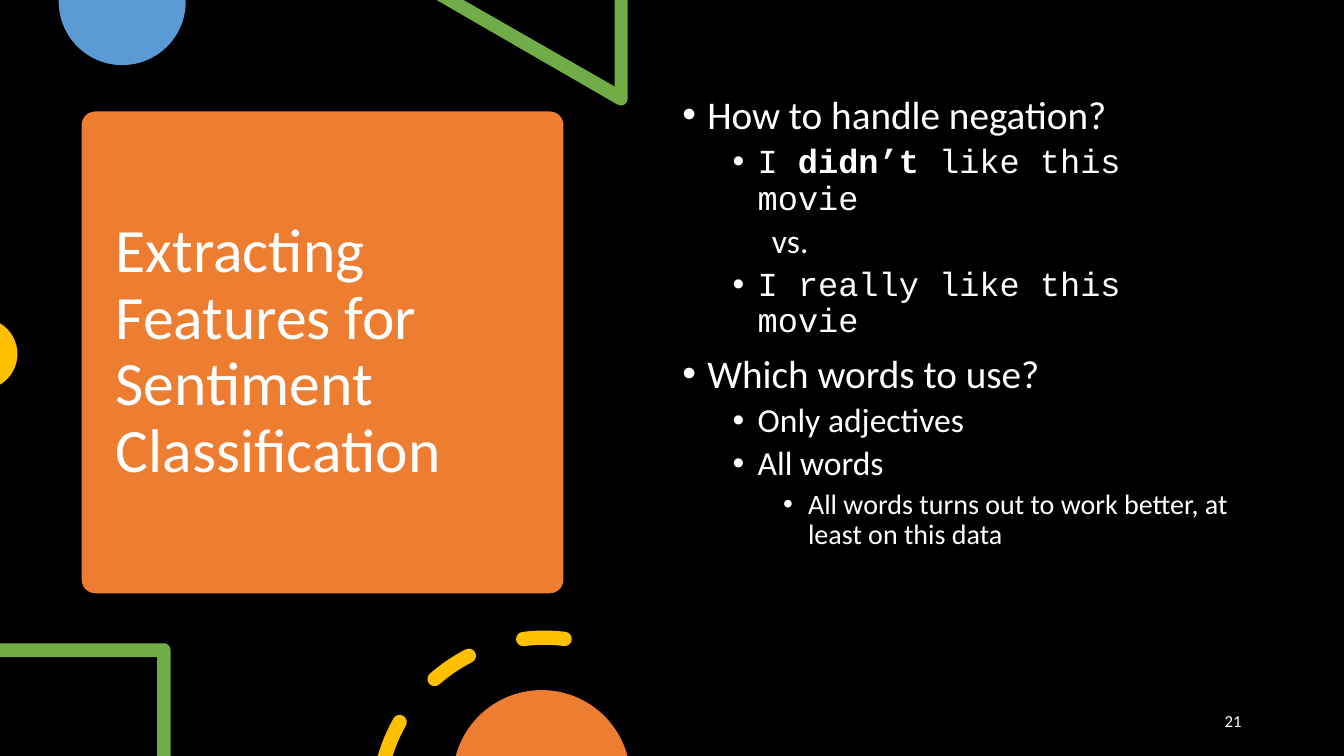
from math import ceil, cos, radians, sin, tan

from lxml import etree
from pptx import Presentation
from pptx.dml.color import RGBColor
from pptx.enum.shapes import MSO_SHAPE
from pptx.enum.text import MSO_ANCHOR, MSO_AUTO_SIZE, PP_ALIGN
from pptx.oxml.ns import qn
from pptx.util import Cm, Pt

ROUNDED = MSO_SHAPE.ROUNDED_RECTANGLE
MIDDLE, TOP = MSO_ANCHOR.MIDDLE, MSO_ANCHOR.TOP
LEFT, RIGHT = PP_ALIGN.LEFT, PP_ALIGN.RIGHT
NO_FIT = MSO_AUTO_SIZE.NONE

BLACK = RGBColor(0x00, 0x00, 0x00)
WHITE = RGBColor(0xFF, 0xFF, 0xFF)
ORANGE = RGBColor(0xED, 0x7D, 0x31)
BLUE = RGBColor(0x5B, 0x9B, 0xD5)
GREEN = RGBColor(0x70, 0xAD, 0x47)
YELLOW = RGBColor(0xFF, 0xC0, 0x00)

SANS, MONO = "Calibri", "Courier New"
WIDTH, HEIGHT = 33.87, 19.05

# Paragraph formats: level, left margin and hanging indent in cm, space before, size
HEAD = dict(level=0, margin=0.63, hang=0.63, before=10, size=28)
ITEM = dict(level=1, margin=1.9, hang=0.63, before=5, size=24)
PLAIN = dict(ITEM, margin=2.26, hang=0)
DETAIL = dict(level=2, margin=3.17, hang=0.63, before=5, size=20)

# Each paragraph: format, font, runs as (text, bold)
BODY = [
    (HEAD, SANS, [("How to handle negation?", False)]),
    (ITEM, MONO, [("I ", False), ("didn’t", True), (" like this movie", False)]),
    (PLAIN, SANS, [("vs.", False)]),
    (ITEM, MONO, [("I really like this movie", False)]),
    (HEAD, SANS, [("Which words to use?", False)]),
    (ITEM, SANS, [("Only adjectives", False)]),
    (ITEM, SANS, [("All words", False)]),
    (DETAIL, SANS, [("All words turns out to work better, at least on this data", False)]),
]


def place(sp, box):
    for name, value in zip(("left", "top", "width", "height"), box):
        setattr(sp, name, Cm(value))


def set_frame(tf, anchor):
    for name, value in dict(word_wrap=True, auto_size=NO_FIT, vertical_anchor=anchor).items():
        setattr(tf, name, value)


def add_run(p, text, size, font=SANS, bold=False):
    r = p.add_run()
    r.text = text
    for name, value in dict(name=font, size=Pt(size), bold=bold).items():
        setattr(r.font, name, value)
    r.font.color.rgb = WHITE


def set_bullet(p, margin, hang):
    pPr = p._p.get_or_add_pPr()
    pPr.set("marL", str(Cm(margin)))
    pPr.set("indent", str(-Cm(hang)))
    if hang:
        etree.SubElement(pPr, qn("a:buFont")).set("typeface", "Arial")
        etree.SubElement(pPr, qn("a:buChar")).set("char", "•")
    else:
        etree.SubElement(pPr, qn("a:buNone"))


def paint(sp, color):
    sp.shadow.inherit = False
    sp.fill.solid()
    sp.fill.fore_color.rgb = color
    sp.line.fill.background()


def arc(cx, cy, radius, start, end):
    """Start point, then Bezier curves of at most a quarter; degrees run clockwise."""
    count = ceil(abs(end - start) / 95)
    step = radians(end - start) / count
    reach = 4 / 3 * tan(step / 4)

    def at(a, k=0):
        return cx + radius * (cos(a) - k * sin(a)), cy + radius * (sin(a) + k * cos(a))

    angles = [radians(start) + step * i for i in range(count + 1)]
    return [(at(angles[0]),)] + [
        (at(a, reach), at(b, -reach), at(b)) for a, b in zip(angles, angles[1:])]


def corners(*points):
    return [(point,) for point in points]


def add_outline(s, contours, color):
    """Contours hold steps of one point (a line) or three (a Bezier curve)."""
    builder = None
    for steps in contours:
        points = [(Cm(x), Cm(y)) for step in steps for x, y in step]
        if builder:
            builder.move_to(*points[0])
        else:
            builder = s.shapes.build_freeform(*points[0], scale=1.0)
        builder.add_line_segments(points[1:], close=True)
    sp = builder.convert_to_shape()
    lines = iter(list(sp._element.iter(qn("a:lnTo"))))
    for step in (step for steps in contours for step in steps[1:]):
        nodes = [next(lines) for _ in step]
        if len(nodes) == 3:
            curve = etree.Element(qn("a:cubicBezTo"))
            nodes[0].addprevious(curve)
            for node in nodes:
                curve.append(node[0])
                node.getparent().remove(node)
    paint(sp, color)


def ring_dash(cx, cy, radius, half, outer_start, inner_start, end):
    """A dash of the ring, with a flat start where the slide edge cuts it."""
    def cap(angle, first):
        a = radians(angle)
        return arc(cx + radius * cos(a), cy + radius * sin(a), half, first, first + 180)[1:]

    steps = arc(cx, cy, radius + half, outer_start, end) + cap(end, end)
    steps += arc(cx, cy, radius - half, end, inner_start)[1:]
    if outer_start == inner_start:
        steps += cap(inner_start, inner_start + 180)
    return steps


def add_top_decor(s):
    # Blue disc and green triangle cut by the top edge
    add_outline(s, [arc(3.08, 0.04, 1.6, -1.4, 181.4)], BLUE)
    triangle = corners((15.82, 0), (15.49, 0), (15.49, 2.18), (11.68, 0), (11, 0))
    add_outline(s, [triangle + arc(15.65, 2.49, 0.17, 120, 0)], GREEN)


def add_left_decor(s):
    # Yellow disc cut by the left edge
    add_outline(s, [arc(-0.46, 8.92, 0.9, -59.3, 59.3)], YELLOW)


def add_bottom_decor(s):
    # Green square corner, dashed yellow ring and orange disc
    corner = corners((0, 16.21), (0, 16.56), (3.96, 16.56), (3.96, HEIGHT), (4.3, HEIGHT))
    add_outline(s, [corner + arc(4.13, 16.38, 0.17, 0, -90)], GREEN)
    spans = [(196.1, 197.6, 209.5), (228.7, 228.7, 243), (262.7, 262.7, 277)]
    add_outline(s, [ring_dash(13.72, 20.26, 4.19, 0.18, *span) for span in spans], YELLOW)
    add_outline(s, [arc(13.65, 19.63, 2.24, 195, 345)], ORANGE)


def add_title_card(s, left, top, side):
    card = s.shapes.add_shape(ROUNDED, Cm(left), Cm(top), Cm(side), Cm(side))
    card.adjustments[0] = 0.028
    paint(card, ORANGE)
    title = s.shapes.title
    s.shapes._spTree.append(title._element)  # bring the title above the card
    place(title, (left + 0.6, top + 0.28, side - 1.2, side - 0.56))
    set_frame(title.text_frame, MIDDLE)
    p = title.text_frame.paragraphs[0]
    p.alignment, p.line_spacing = LEFT, 0.9
    add_run(p, "Extracting Features for Sentiment Classification", 44)


def add_body(s, box):
    sp = s.placeholders[1]
    place(sp, box)
    tf = sp.text_frame
    set_frame(tf, TOP)
    for i, (style, font, runs) in enumerate(BODY):
        p = tf.add_paragraph() if i else tf.paragraphs[0]
        p.level, p.line_spacing = style["level"], 0.9
        p.space_before = Pt(style["before"])
        set_bullet(p, style["margin"], style["hang"])
        for text, bold in runs:
            add_run(p, text, style["size"], font, bold)


def add_page_number(s, box):
    tf = s.shapes.add_textbox(*map(Cm, box)).text_frame
    set_frame(tf, MIDDLE)
    p = tf.paragraphs[0]
    p.alignment, p.space_after = RIGHT, Pt(6)
    add_run(p, "21", 12)


def main():
    prs = Presentation()
    prs.slide_width, prs.slide_height = Cm(WIDTH), Cm(HEIGHT)
    s = prs.slides.add_slide(prs.slide_layouts[1])
    s.background.fill.solid()
    s.background.fill.fore_color.rgb = BLACK
    add_title_card(s, 2.06, 2.81, 12.14)
    add_top_decor(s)
    add_left_decor(s)
    add_body(s, (16.94, 2.28, 14.6, 13.59))
    add_bottom_decor(s)
    add_page_number(s, (29.18, 17.65, 2.36, 1.02))
    prs.save("out.pptx")


if __name__ == "__main__":
    main()
